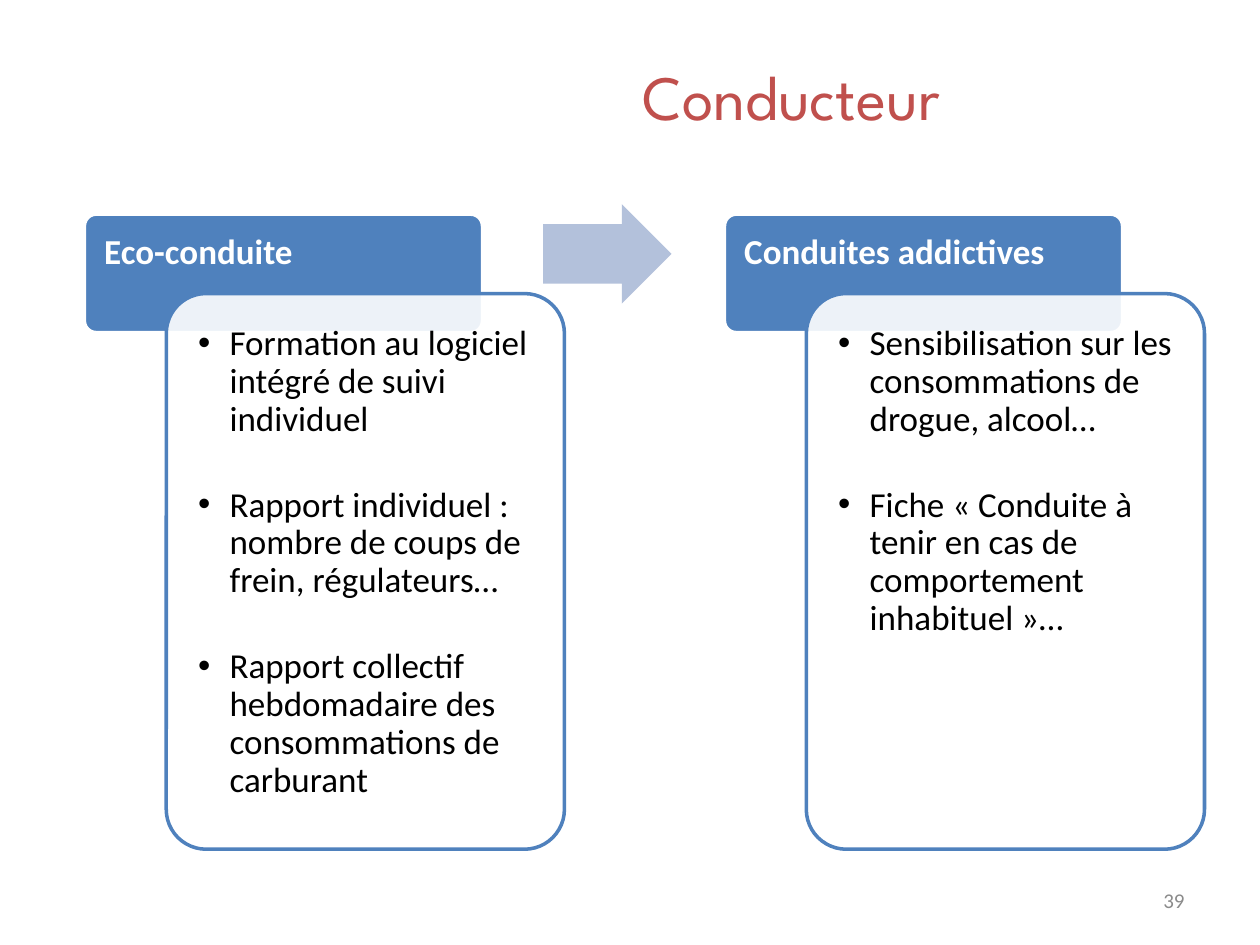
import pptx
import pptx.util
import pptx.dml.color
import pptx.enum.shapes
import pptx.enum.text
import pptx.oxml.ns
from lxml import etree

Inches, Pt = pptx.util.Inches, pptx.util.Pt
SHAPES = pptx.enum.shapes.MSO_SHAPE
ALIGN = pptx.enum.text.PP_ALIGN
ANCHOR = pptx.enum.text.MSO_ANCHOR
qn = pptx.oxml.ns.qn

COLORS = {
    "title": "C0504D",
    "blue": "4F81BD",
    "arrow": "B3C1DB",
    "white": "FFFFFF",
    "black": "000000",
    "gray": "8B8B8B",
}

TITLE = "Conducteur"
PAGE_NUMBER = "39"
TOPICS = [
    ("Eco-conduite", [
        "Formation au logiciel intégré de suivi individuel",
        "Rapport individuel : nombre de coups de frein, régulateurs…",
        "Rapport collectif hebdomadaire des consommations de carburant",
    ]),
    ("Conduites addictives", [
        "Sensibilisation sur les consommations de drogue, alcool…",
        "Fiche « Conduite à tenir en cas de comportement inhabituel »…",
    ]),
]

TOPIC_LEFT, TOPIC_STEP, CARD_WIDTH = 0.67, 5.08, 3.16
HEADER_TOP, HEADER_HEIGHT = 1.7, 0.94
DETAIL_SHIFT, DETAIL_TOP, DETAIL_HEIGHT = 0.65, 2.33, 4.41


def rgb(name):
    return pptx.dml.color.RGBColor.from_string(COLORS[name])


def style(paragraph, size, color, font="Calibri", bold=False):
    paragraph.font.size = Pt(size)
    paragraph.font.name = font
    paragraph.font.bold = bold
    paragraph.font.color.rgb = rgb(color)


def add_block(slide, preset, box, fill, line=None):
    block = slide.shapes.add_shape(preset, *map(Inches, box))
    block.shadow.inherit = False
    block.fill.solid()
    block.fill.fore_color.rgb = rgb(fill)
    if line:
        block.line.color.rgb = rgb(line)
        block.line.width = Pt(2)
    else:
        block.line.fill.background()
    return block


def add_card(slide, box, fill, line, inset):
    card = add_block(slide, SHAPES.ROUNDED_RECTANGLE, box, fill, line)
    card.adjustments[0] = 0.1
    frame = card.text_frame
    frame.word_wrap = True
    frame.vertical_anchor = ANCHOR.TOP
    frame.margin_left = frame.margin_right = Inches(inset)
    frame.margin_top = frame.margin_bottom = Inches(inset)
    return card


def add_bullet(paragraph):
    properties = paragraph._p.get_or_add_pPr()
    properties.set("marL", str(Inches(0.25)))
    properties.set("indent", str(-Inches(0.25)))
    etree.SubElement(properties, qn("a:buFont"), typeface="Arial")
    etree.SubElement(properties, qn("a:buChar"), char="•")


def add_topic(slide, left, heading, details):
    header = add_card(slide, (left, HEADER_TOP, CARD_WIDTH, HEADER_HEIGHT),
                      "blue", "white", 0.13)
    heading_line = header.text_frame.paragraphs[0]
    heading_line.text = heading
    heading_line.alignment = ALIGN.LEFT
    heading_line.line_spacing = 0.9
    style(heading_line, 20, "white", bold=True)

    panel = add_card(slide, (left + DETAIL_SHIFT, DETAIL_TOP, CARD_WIDTH, DETAIL_HEIGHT),
                     "white", "blue", 0.16)
    panel_color = panel._element.spPr.find(qn("a:solidFill"))[0]
    etree.SubElement(panel_color, qn("a:alpha"), val="90000")
    frame = panel.text_frame
    for index, detail in enumerate(details):
        item = frame.add_paragraph() if index else frame.paragraphs[0]
        item.text = detail
        item.alignment = ALIGN.LEFT
        item.line_spacing = 0.9
        if index:
            item.space_before = Pt(27.5)
        add_bullet(item)
        style(item, 20, "black")


def main():
    deck = pptx.Presentation()
    deck.slide_width, deck.slide_height = Inches(10), Inches(7.5)
    slide = deck.slides.add_slide(deck.slide_layouts[5])

    title = slide.shapes.title
    title.left, title.top = Inches(2.57), Inches(0.13)
    title.width, title.height = Inches(7.42), Inches(1.25)
    title.text_frame.vertical_anchor = ANCHOR.MIDDLE
    title_line = title.text_frame.paragraphs[0]
    title_line.text = TITLE
    title_line.alignment = ALIGN.CENTER
    style(title_line, 36, "title", "League Spartan")

    for index, (heading, details) in enumerate(TOPICS):
        add_topic(slide, TOPIC_LEFT + index * TOPIC_STEP, heading, details)

    arrow = add_block(slide, SHAPES.RIGHT_ARROW, (4.31, 1.62, 1.02, 0.79), "arrow")
    arrow.adjustments[0] = 0.6
    arrow.adjustments[1] = 0.5

    page = slide.shapes.add_textbox(Inches(7.17), Inches(6.95), Inches(2.33), Inches(0.39))
    page.text_frame.word_wrap = True
    page.text_frame.vertical_anchor = ANCHOR.MIDDLE
    page_line = page.text_frame.paragraphs[0]
    page_line.text = PAGE_NUMBER
    page_line.alignment = ALIGN.RIGHT
    style(page_line, 12, "gray")

    deck.save("out.pptx")


if __name__ == "__main__":
    main()
